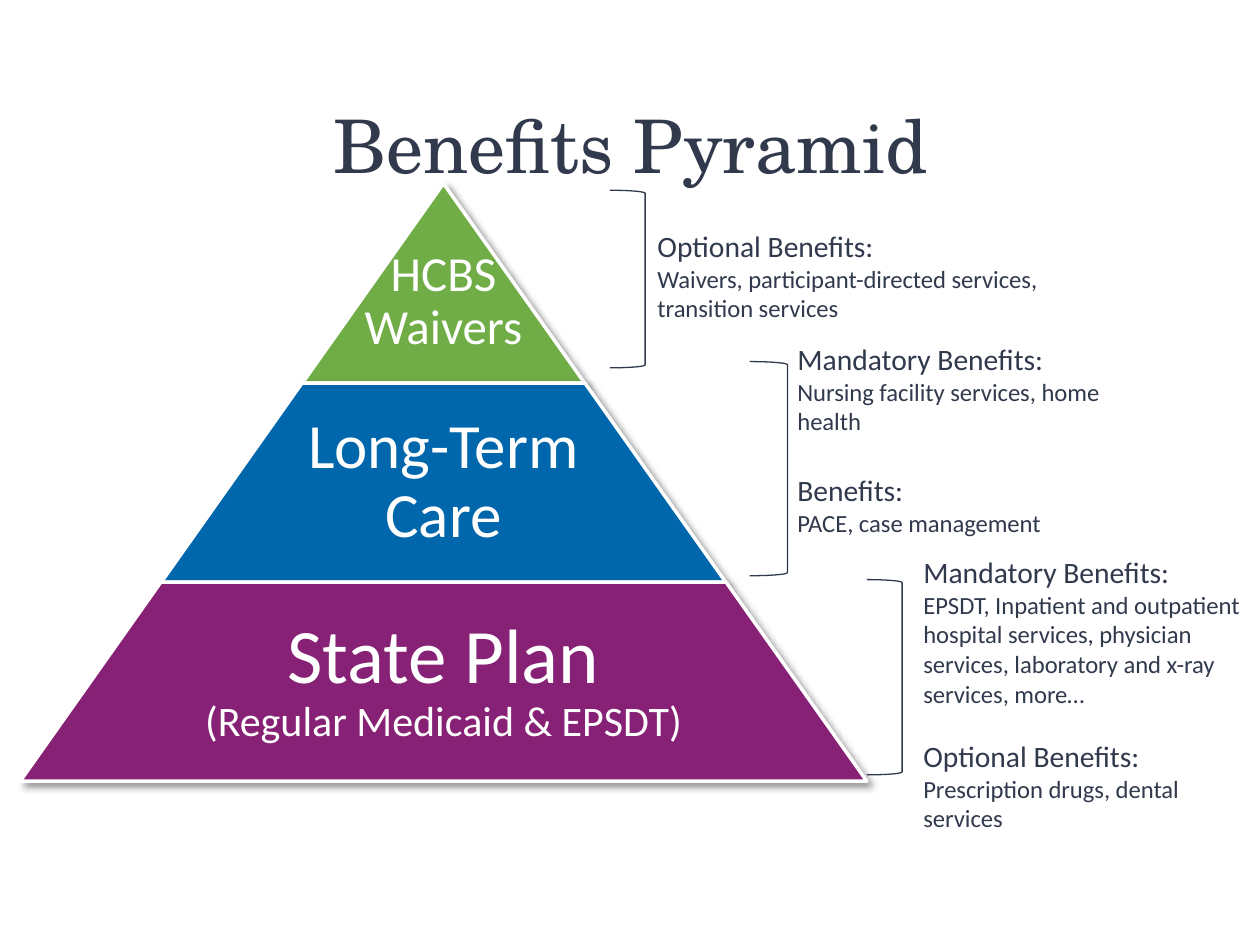
from lxml.etree import SubElement
from pptx import Presentation
from pptx.dml.color import RGBColor
from pptx.enum.shapes import MSO_SHAPE
from pptx.enum.text import MSO_ANCHOR, PP_ALIGN
from pptx.oxml.ns import qn
from pptx.util import Inches, Pt

COLORS = {
    "ink": "31394D",
    "white": "FFFFFF",
    "green": "70AD47",
    "blue": "0067AC",
    "purple": "872175",
    "shadow": "000000",
}
COLUMNS, ROWS = 100, 75
SLIDE_WIDTH, SLIDE_HEIGHT = Inches(10), Inches(7.5)
APEX_COLUMN, APEX_ROW = 35.2, 14.6
TIER_HEIGHT, TIER_STEP = 15.8, 22.4
HEADING, DETAIL = 16.9, 14.1

TIERS = [
    ("green", 22.4, 0.03, 0.3, [("HCBS", 28), ("Waivers", 28)]),
    ("blue", 29.1, 0.05, 0, [("Long-Term", 36), ("Care", 36)]),
    ("purple", 43.6, 0.06, 0, [("State Plan", 44), ("(Regular Medicaid & EPSDT)", 24)]),
]
NOTES = [
    ((48.4, 15.1, 2.8, 14.1), (51.2, 17.6, 39, 8.6), 0, [
        ("Optional Benefits:", "Waivers, participant-directed services, \vtransition services"),
    ]),
    ((59.5, 28.7, 3, 17), (62.3, 26.6, 30.9, 16.6), 20.6, [
        ("Mandatory Benefits:", "Nursing facility services, home health"),
        ("Benefits:", "PACE, case management"),
    ]),
    ((68.8, 46, 2.8, 15.5), (72.3, 43.5, 27.7, 23.2), 17.2, [
        ("Mandatory Benefits:", "EPSDT, Inpatient and outpatient \vhospital services, "
         "physician services, laboratory and x-ray services, more…"),
        ("Optional Benefits:", "Prescription drugs, dental services"),
    ]),
]


def color(name):
    return RGBColor.from_string(COLORS[name])


def grid(column, row, columns, rows):
    cell_width, cell_height = SLIDE_WIDTH / COLUMNS, SLIDE_HEIGHT / ROWS
    return (round(column * cell_width), round(row * cell_height),
            round(columns * cell_width), round(rows * cell_height))


def write_text(paragraph, text, *, size, ink="ink", font="Calibri",
               align=PP_ALIGN.LEFT, spacing=None, before=0):
    paragraph.text = text
    paragraph.alignment = align
    paragraph.line_spacing = spacing
    paragraph.space_before = Pt(before)
    for run in paragraph.runs:
        run.font.name = font
        run.font.size = Pt(size)
        run.font.color.rgb = color(ink)


def add_text_box(slide, box, lines, anchor=MSO_ANCHOR.TOP, insets=(0.1, 0.05, 0.1, 0.05)):
    frame = slide.shapes.add_textbox(*grid(*box)).text_frame
    frame.word_wrap = True
    frame.vertical_anchor = anchor
    (frame.margin_left, frame.margin_top,
     frame.margin_right, frame.margin_bottom) = map(Inches, insets)
    for index, (text, text_format) in enumerate(lines):
        paragraph = frame.add_paragraph() if index else frame.paragraphs[0]
        write_text(paragraph, text, **text_format)


def add_shadow(shape):
    effects = shape._element.spPr.find(qn("a:effectLst"))
    shadow = SubElement(effects, qn("a:outerShdw"), blurRad=str(Pt(4)), dist=str(Pt(3)),
                        dir="2700000", algn="tl", rotWithShape="0")
    tint = SubElement(shadow, qn("a:srgbClr"), val=COLORS["shadow"])
    SubElement(tint, qn("a:alpha"), val="40000")


def add_outlined_shape(slide, kind, box, adjustment, line, width, fill=None):
    shape = slide.shapes.add_shape(kind, *grid(*box))
    shape.shadow.inherit = False
    shape.adjustments[0] = adjustment
    shape.line.color.rgb = color(line)
    shape.line.width = Pt(width)
    if fill:
        shape.fill.solid()
        shape.fill.fore_color.rgb = color(fill)
    else:
        shape.fill.background()
    return shape


def add_tier(slide, index, fill, text_width, inset, drop, lines):
    row = APEX_ROW + index * TIER_HEIGHT
    width = (index + 1) * TIER_STEP
    tier = add_outlined_shape(
        slide, MSO_SHAPE.TRAPEZOID, (APEX_COLUMN - width / 2, row, width, TIER_HEIGHT),
        0.707, "white", 2, fill)
    add_shadow(tier)
    text_format = {"ink": "white", "align": PP_ALIGN.CENTER, "spacing": 0.9}
    add_text_box(
        slide, (APEX_COLUMN - text_width / 2, row, text_width, TIER_HEIGHT),
        [(text, {"size": size, **text_format}) for text, size in lines],
        MSO_ANCHOR.MIDDLE, (inset, inset + drop, inset, inset))


def add_note(slide, bracket, box, gap, groups):
    add_outlined_shape(slide, MSO_SHAPE.RIGHT_BRACKET, bracket, 0.083, "ink", 0.75)
    lines = []
    for heading, detail in groups:
        lines.append((heading, {"size": HEADING, "before": gap if lines else 0}))
        lines.append((detail, {"size": DETAIL}))
    add_text_box(slide, box, lines)


def add_title(slide, text):
    title = slide.shapes.title
    title.left, title.top, title.width, title.height = grid(6.9, 7, 86.3, 8.9)
    title.text_frame.vertical_anchor = MSO_ANCHOR.MIDDLE
    write_text(title.text_frame.paragraphs[0], text, size=42.2,
               font="TeX Gyre Schola", align=PP_ALIGN.CENTER)


def main():
    presentation = Presentation()
    presentation.slide_width, presentation.slide_height = SLIDE_WIDTH, SLIDE_HEIGHT
    slide = presentation.slides.add_slide(presentation.slide_layouts.get_by_name("Title Only"))
    add_title(slide, "Benefits Pyramid")
    for index, tier in enumerate(TIERS):
        add_tier(slide, index, *tier)
    for note in NOTES:
        add_note(slide, *note)
    presentation.save("out.pptx")


if __name__ == "__main__":
    main()
